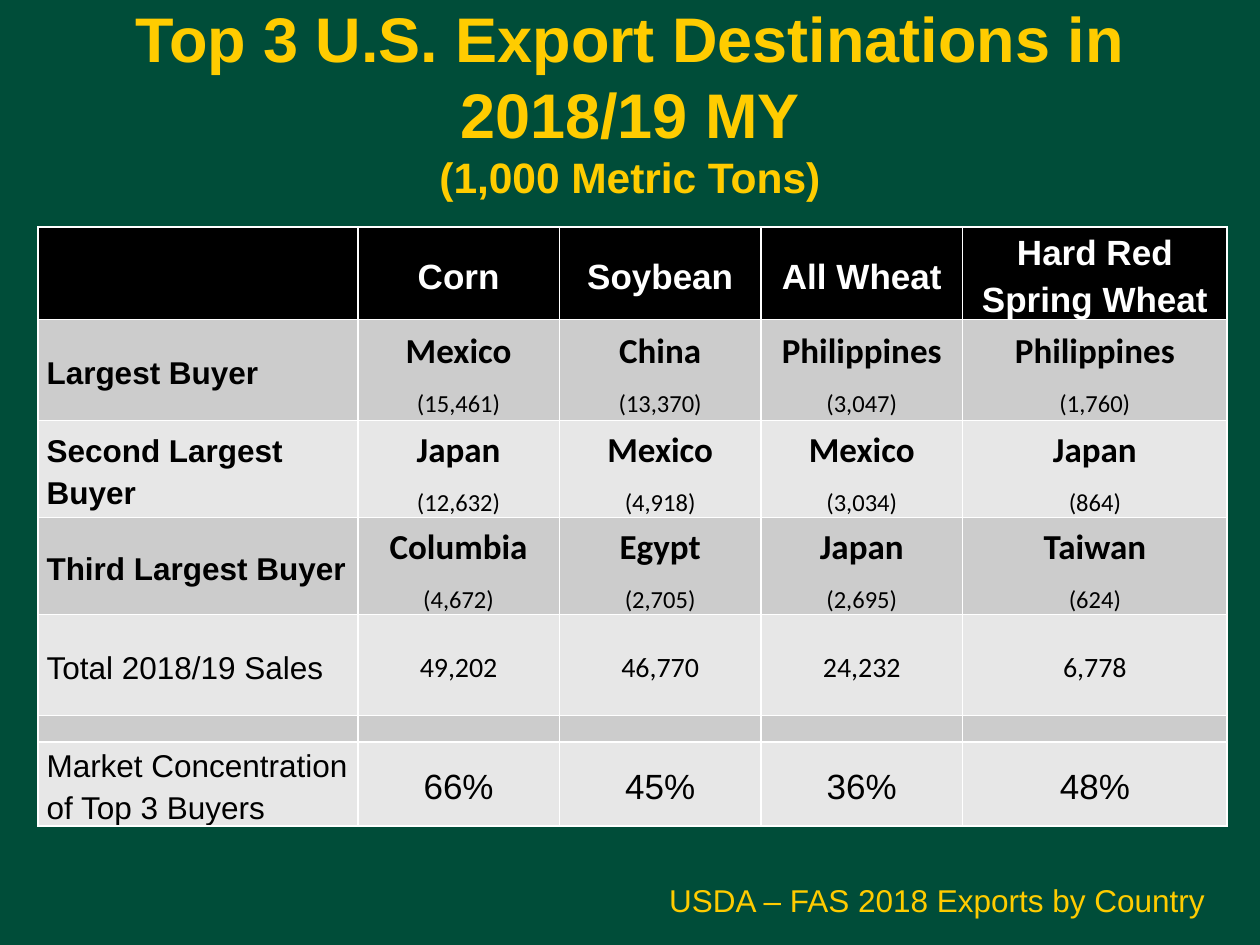
from lxml.etree import SubElement
from pptx import Presentation
from pptx.dml.color import RGBColor
from pptx.enum.shapes import MSO_SHAPE
from pptx.enum.text import MSO_ANCHOR, MSO_AUTO_SIZE, PP_ALIGN
from pptx.oxml.ns import qn
from pptx.util import Inches, Pt

GREEN, GOLD, WHITE, BLACK = "004D39", "FFCC00", "FFFFFF", "000000"
DARK_BAND, LIGHT_BAND = "CCCCCC", "E7E7E7"
TITLE = "Top 3 U.S. Export Destinations in 2018/19 MY\v(1,000 Metric Tons)"
SOURCE = "USDA – FAS 2018 Exports by Country "

COLUMN_WIDTHS = [2.54, 1.6, 1.6, 1.6, 2.1]
ROWS = [
    ("header", 0.64, ["", "Corn", "Soybean", "All Wheat", "Hard Red Spring Wheat"]),
    ("buyer", 0.8, ["Largest Buyer", "Mexico\n(15,461)", "China\n(13,370)",
                    "Philippines\n(3,047)", "Philippines\n(1,760)"]),
    ("buyer", 0.64, ["Second Largest Buyer", "Japan\n(12,632)", "Mexico\n(4,918)",
                     "Mexico\n(3,034)", "Japan\n(864)"]),
    ("buyer", 0.53, ["Third Largest Buyer", "Columbia\n(4,672)", "Egypt\n(2,705)",
                     "Japan\n(2,695)", "Taiwan\n(624)"]),
    ("total", 0.8, ["Total 2018/19 Sales", "49,202", "46,770", "24,232", "6,778"]),
    ("spacer", 0.21, [""] * 5),
    ("share", 0.53, ["Market Concentration of Top 3 Buyers", "66%", "45%", "36%", "48%"]),
]
LABEL_STYLES = {"buyer": (18, "Arial", True), "total": (18, "Arial", False),
                "share": (18, "Arial", False)}
VALUE_STYLES = {
    "header": [(20, "Arial", True)],
    "buyer": [(20, "Calibri", True), (14, "Calibri", False)],
    "total": [(16, "Calibri", False)],
    "share": [(20, "Arial", False)],
}


def set_fill(fill, color):
    fill.solid()
    fill.fore_color.rgb = RGBColor.from_string(color)


def format_run(run, size, name, bold, color):
    font = run.font
    font.size, font.name, font.bold = Pt(size), name, bold
    font.color.rgb = RGBColor.from_string(color)


def add_borders(cell, color, width):
    properties = cell._tc.get_or_add_tcPr()
    for side in ("a:lnL", "a:lnR", "a:lnT", "a:lnB"):
        line = SubElement(properties, qn(side), w=str(Pt(width)))
        SubElement(SubElement(line, qn("a:solidFill")), qn("a:srgbClr"), val=color)


def fill_cell(cell, text, kind, is_label, band):
    add_borders(cell, WHITE, 1)
    set_fill(cell.fill, band)
    cell.vertical_anchor = MSO_ANCHOR.MIDDLE
    cell.margin_left = cell.margin_right = Inches(0.07)
    cell.margin_top = cell.margin_bottom = 0
    cell.text_frame.text = text
    if not text:
        SubElement(cell.text_frame.paragraphs[0]._p, qn("a:endParaRPr"), sz="800")
        return
    styles = [LABEL_STYLES[kind]] if is_label else VALUE_STYLES[kind]
    color = WHITE if kind == "header" else BLACK
    for paragraph, style in zip(cell.text_frame.paragraphs, styles):
        paragraph.alignment = PP_ALIGN.LEFT if is_label else PP_ALIGN.CENTER
        paragraph.line_spacing = 1.19
        paragraph.space_after = Pt(6)
        format_run(paragraph.runs[0], *style, color)


def add_backdrop(presentation, slide):
    backdrop = slide.shapes.add_shape(
        MSO_SHAPE.RECTANGLE, 0, 0, presentation.slide_width, presentation.slide_height)
    backdrop.shadow.inherit = False
    set_fill(backdrop.fill, GREEN)
    backdrop.line.fill.background()
    backdrop._element.addnext(slide.shapes.title._element)


def add_title(slide):
    title = slide.shapes.title
    title.left, title.top = Inches(0.25), Inches(0.17)
    title.width, title.height = Inches(9.5), Inches(1.26)
    text_frame = title.text_frame
    text_frame.text = TITLE
    text_frame.word_wrap = True
    text_frame.auto_size = MSO_AUTO_SIZE.NONE
    text_frame.vertical_anchor = MSO_ANCHOR.MIDDLE
    paragraph = text_frame.paragraphs[0]
    paragraph.alignment = PP_ALIGN.CENTER
    for run, size in zip(paragraph.runs, (36, 24.3)):
        format_run(run, size, "Arial", True, GOLD)


def add_export_table(slide):
    table = slide.shapes.add_table(
        len(ROWS), len(COLUMN_WIDTHS), Inches(0.3), Inches(1.8),
        Inches(sum(COLUMN_WIDTHS)), Inches(sum(row[1] for row in ROWS))).table
    table.first_row = table.horz_banding = False
    for column, width in zip(table.columns, COLUMN_WIDTHS):
        column.width = Inches(width)
    for row_index, (kind, height, texts) in enumerate(ROWS):
        table.rows[row_index].height = Inches(height)
        band = DARK_BAND if row_index % 2 else LIGHT_BAND
        if kind == "header":
            band = BLACK
        for column_index, text in enumerate(texts):
            fill_cell(table.cell(row_index, column_index), text, kind, column_index == 0, band)


def add_source(slide):
    box = slide.shapes.add_textbox(Inches(4.89), Inches(6.94), Inches(4.84), Inches(0.4))
    box.text_frame.word_wrap = True
    box.text_frame.auto_size = MSO_AUTO_SIZE.SHAPE_TO_FIT_TEXT
    box.text_frame.text = SOURCE
    paragraph = box.text_frame.paragraphs[0]
    paragraph.alignment = PP_ALIGN.RIGHT
    format_run(paragraph.runs[0], 18, "Arial", False, GOLD)


def main():
    """Build the export destinations slide."""
    presentation = Presentation()
    presentation.slide_width, presentation.slide_height = Inches(10), Inches(7.5)
    slide = presentation.slides.add_slide(presentation.slide_layouts[5])
    add_backdrop(presentation, slide)
    add_title(slide)
    add_export_table(slide)
    add_source(slide)
    presentation.save("out.pptx")


if __name__ == "__main__":
    main()
